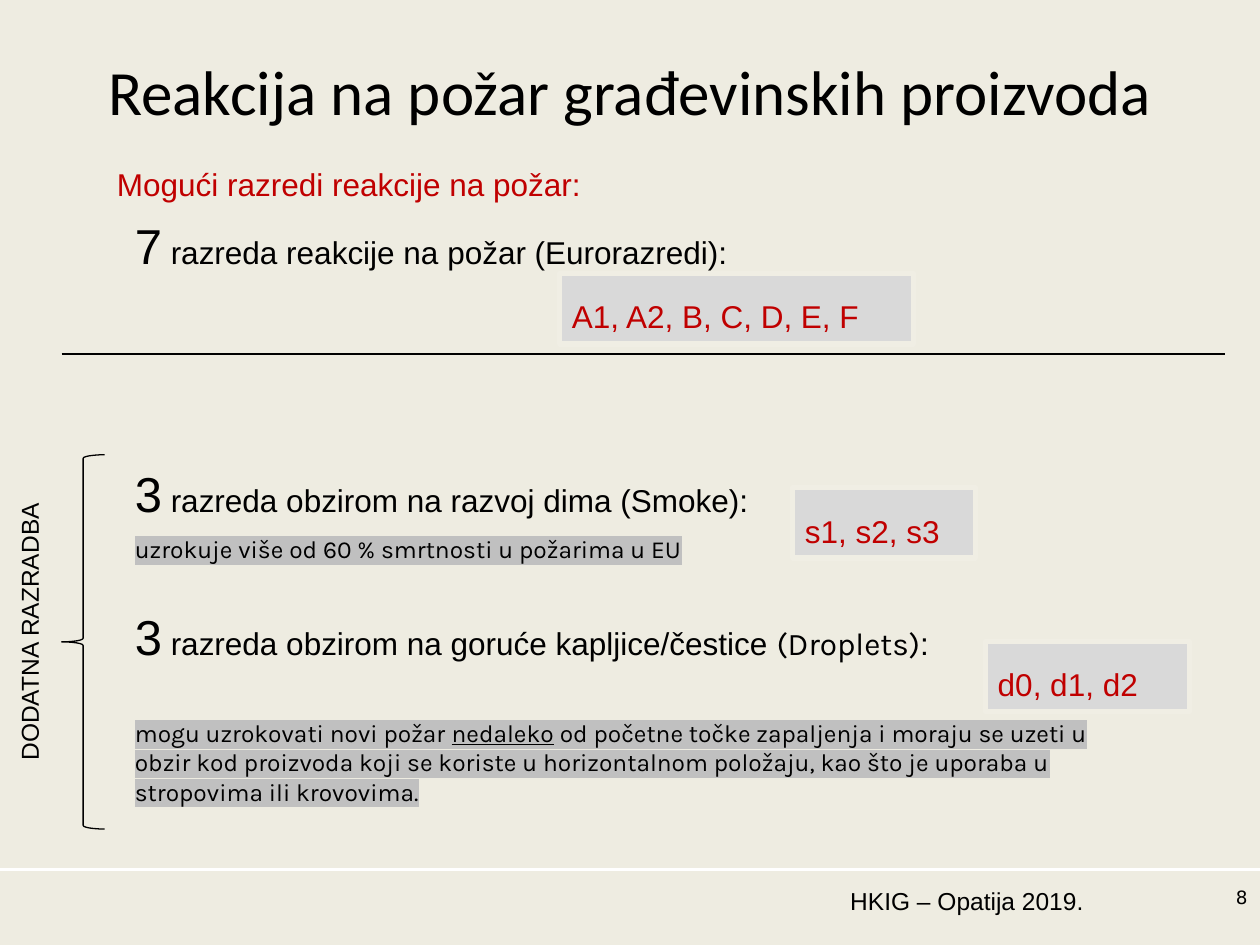
"""Build the slide on reaction-to-fire classes of construction products."""
from lxml.etree import SubElement
from pptx import Presentation
from pptx.dml.color import RGBColor
from pptx.enum.shapes import MSO_CONNECTOR, MSO_SHAPE
from pptx.enum.text import MSO_ANCHOR, MSO_AUTO_SIZE, PP_ALIGN
from pptx.oxml.ns import qn
from pptx.util import Inches, Pt

COLORS = {"back": "EEECE1", "white": "FFFFFF", "black": "000000", "red": "C00000",
          "tag": "D9D9D9", "edge": "F0EEE4", "mark": "C0C0C0"}
RGB = {name: RGBColor.from_string(value) for name, value in COLORS.items()}

deck = Presentation()
deck.slide_width, deck.slide_height = Inches(10), Inches(7.5)
page = deck.slides.add_slide(deck.slide_layouts[1])
page.background.fill.solid()
page.background.fill.fore_color.rgb = RGB["back"]


def place(box, left, top, width, height):
    box.left, box.top = Inches(left), Inches(top)
    box.width, box.height = Inches(width), Inches(height)


def write(box, text, size, color="black", align=PP_ALIGN.LEFT, font="Arial", anchor=MSO_ANCHOR.TOP):
    frame = box.text_frame
    frame.word_wrap = True
    frame.auto_size = MSO_AUTO_SIZE.NONE
    frame.vertical_anchor = anchor
    para = frame.paragraphs[0]
    para.text = text
    para.alignment = align
    para.font.size, para.font.name = Pt(size), font
    para.font.color.rgb = RGB[color]


title = page.shapes.title
place(title, 0.5, 0.3, 9, 0.84)
write(title, "Reakcija na požar građevinskih proizvoda", 36,
      align=PP_ALIGN.CENTER, font="Calibri", anchor=MSO_ANCHOR.MIDDLE)

body = page.placeholders[1]
place(body, 0.97, 1.62, 8.05, 5.61)
frame = body.text_frame
frame.word_wrap = True
frame.auto_size = MSO_AUTO_SIZE.NONE
frame.vertical_anchor = MSO_ANCHOR.TOP
frame.margin_top = Inches(0.09)

class_lines = [
    (0, False, [("7", 28, "Arial"), (" razreda reakcije na požar (Eurorazredi):", 18, "Arial")]),
    (108, False, [("3", 28, "Arial"), (" razreda obzirom na razvoj dima (Smoke):", 18, "Arial")]),
    (7, True, [("uzrokuje više od 60 % smrtnosti u požarima u EU", 14, "Karla")]),
    (24.5, False, [("3", 28, "Arial"),
                   (" razreda obzirom na goruće kapljice/čestice ", 18, "Arial"),
                   ("(Droplets)", 18, "Karla"), (":", 18, "Arial")]),
    (30, True, [("mogu uzrokovati novi požar ", 14, "Karla"), ("nedaleko", 14, "Karla"),
                (" od početne točke zapaljenja i moraju se uzeti u obzir kod proizvoda koji se "
                 "koriste u horizontalnom položaju, kao što je uporaba u stropovima ili "
                 "krovovima.", 14, "Karla")]),
]
for index, (gap, marked, spans) in enumerate(class_lines):
    para = frame.paragraphs[0] if index == 0 else frame.add_paragraph()
    props = para._p.get_or_add_pPr()
    props.set("marL", "0")
    props.set("indent", "0")
    SubElement(props, qn("a:buNone"))
    para.space_before = Pt(gap)
    para.font.color.rgb = RGB["black"]
    for text, size, font in spans:
        span = para.add_run()
        span.text = text
        if marked:
            highlight = SubElement(span._r.get_or_add_rPr(), qn("a:highlight"))
            SubElement(highlight, qn("a:srgbClr"), val=COLORS["mark"])
        span.font.size, span.font.name = Pt(size), font
        if text == "nedaleko":
            span.font.underline = True

tags = [("A1, A2, B, C, D, E, F", 4.44, 2.17, 2.81),
        ("s1, s2, s3", 6.29, 3.87, 1.45),
        ("d0, d1, d2", 7.82, 5.09, 1.62)]
for text, left, top, width in tags:
    tag = page.shapes.add_shape(MSO_SHAPE.RECTANGLE, Inches(left), Inches(top),
                                Inches(width), Inches(0.56))
    tag.shadow.inherit = False
    tag.fill.solid()
    tag.fill.fore_color.rgb = RGB["tag"]
    tag.line.color.rgb = RGB["edge"]
    tag.line.width = Pt(3)
    write(tag, text, 18, "red")
    tag.text_frame.margin_top = Inches(0.19)

brace = page.shapes.add_shape(MSO_SHAPE.LEFT_BRACE, Inches(0.49), Inches(3.61),
                              Inches(0.34), Inches(2.97))
brace.shadow.inherit = False
brace.fill.background()
brace.line.color.rgb = RGB["black"]
brace.line.width = Pt(0.75)

labels = [
    ("Mogući razredi reakcije na požar:", (0.83, 1.21, 10.03, 0.45), 18, "red",
     PP_ALIGN.LEFT, "Arial", MSO_ANCHOR.BOTTOM, 0),
    ("DODATNA RAZRADBA", (-1.03, 4.7, 2.53, 0.34), 14, "black",
     PP_ALIGN.LEFT, "Arial", MSO_ANCHOR.TOP, 270),
    ("HKIG – Opatija 2019.", (6.57, 6.98, 2.13, 0.52), 14, "black",
     PP_ALIGN.RIGHT, "Arial", MSO_ANCHOR.TOP, 0),
    ("8", (8.78, 6.98, 1.22, 0.52), 10.5, "black",
     PP_ALIGN.RIGHT, "DejaVu Sans", MSO_ANCHOR.TOP, 0),
]
for text, area, size, color, align, font, anchor, angle in labels:
    label = page.shapes.add_textbox(*map(Inches, area))
    label.rotation = angle
    write(label, text, size, color, align, font, anchor)

rules = [(0, 10, 6.9, "white", 1.5), (0.49, 9.72, 2.81, "black", 0.75)]
for start, end, height, color, weight in rules:
    rule = page.shapes.add_connector(MSO_CONNECTOR.STRAIGHT, Inches(start), Inches(height),
                                     Inches(end), Inches(height))
    rule.line.color.rgb = RGB[color]
    rule.line.width = Pt(weight)
    SubElement(rule._element.spPr, qn("a:effectLst"))

deck.save("out.pptx")
